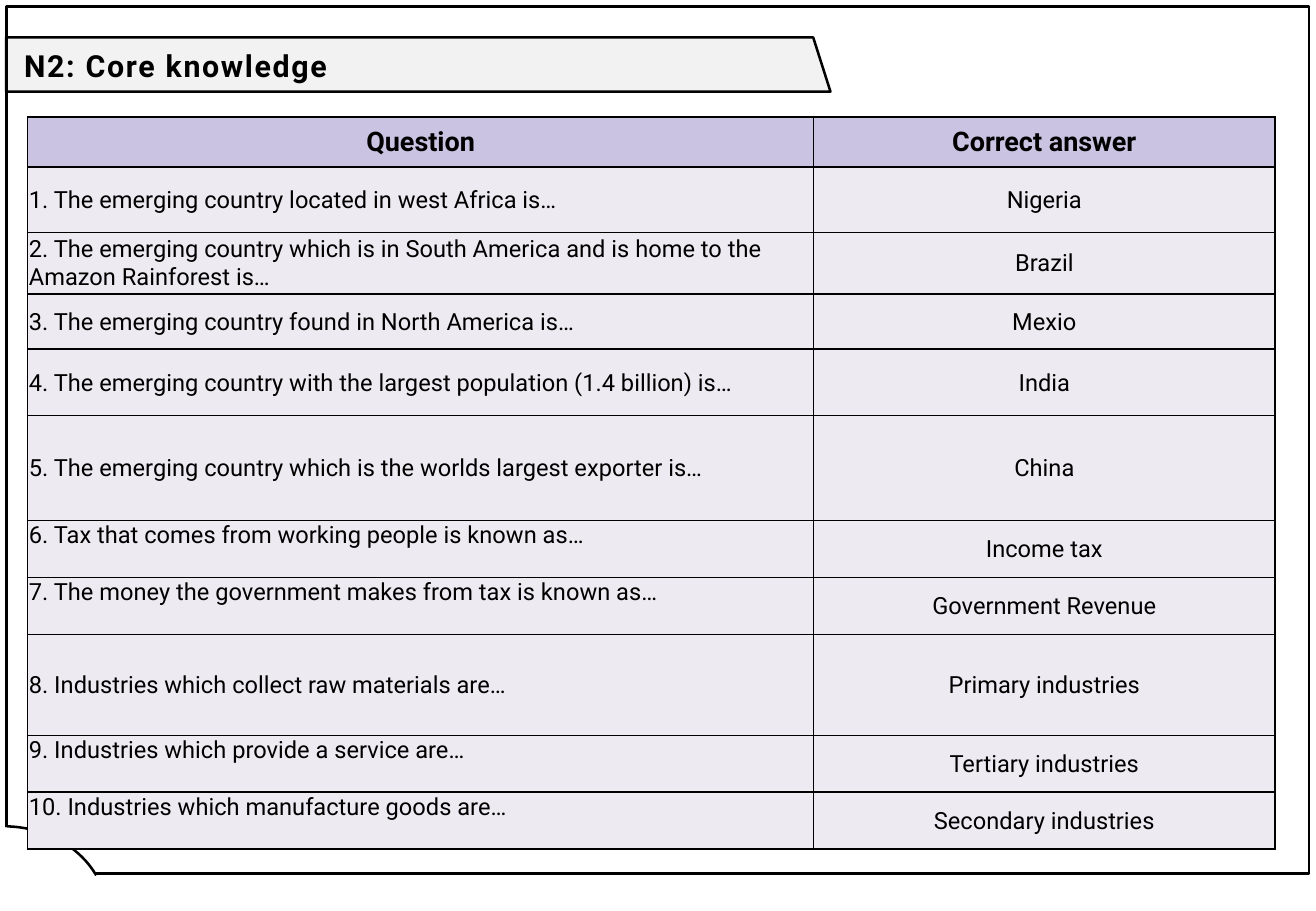
import lxml.etree
import pptx
import pptx.dml.color
import pptx.enum.shapes
import pptx.enum.text
import pptx.oxml.ns
import pptx.util

Pt = pptx.util.Pt
Shape = pptx.enum.shapes.MSO_SHAPE
Align = pptx.enum.text.PP_ALIGN
Anchor = pptx.enum.text.MSO_ANCHOR
BLACK, WHITE, GREY = "000000", "FFFFFF", "F2F2F2"
HEADER_FILL, BODY_FILL = "CAC4E2", "EDEAF1"


def color(value):
    return pptx.dml.color.RGBColor.from_string(value)


class SlideBuilder:
    font_name = "Roboto"
    line_width = 1.5
    border_width = 1

    def __init__(self, slide):
        self.slide = slide

    def style(self, shape, fill=None, line=None):
        shape.shadow.inherit = False
        for part, value in ((shape.fill, fill), (shape.line.fill, line)):
            if value:
                part.solid()
                part.fore_color.rgb = color(value)
            else:
                part.background()
        if line:
            shape.line.width = Pt(self.line_width)
        return shape

    def shape(self, kind, box, fill=None, line=None):
        shape = self.slide.shapes.add_shape(kind, *map(Pt, box))
        return self.style(shape, fill, line)

    def outline(self, points, fill, line):
        points = [(Pt(x), Pt(y)) for x, y in points]
        builder = self.slide.shapes.build_freeform(*points[0])
        builder.add_line_segments(points[1:], close=True)
        return self.style(builder.convert_to_shape(), fill, line)

    def add_text(self, frame, text, size, bold=False, **paragraph_format):
        paragraph = frame.paragraphs[0]
        run = paragraph.add_run()
        run.text = text
        font_format = {"name": self.font_name, "size": Pt(size), "bold": bold}
        for target, values in ((paragraph, paragraph_format), (run.font, font_format)):
            for name, value in values.items():
                setattr(target, name, value)
        run.font.color.rgb = color(BLACK)
        return run

    def title(self, text, box):
        frame = self.slide.shapes.add_textbox(*map(Pt, box)).text_frame
        frame.word_wrap = True
        frame.vertical_anchor = Anchor.MIDDLE
        run = self.add_text(frame, text, 18, True, line_spacing=1.07, space_after=Pt(8))
        run.font._element.set("spc", "100")

    def border(self, cell):
        properties = cell._tc.get_or_add_tcPr()
        qn = pptx.oxml.ns.qn
        for index, side in enumerate(("a:lnL", "a:lnR", "a:lnT", "a:lnB")):
            line = lxml.etree.Element(qn(side), w=str(Pt(self.border_width)))
            fill = lxml.etree.SubElement(line, qn("a:solidFill"))
            lxml.etree.SubElement(fill, qn("a:srgbClr"), val=BLACK)
            properties.insert(index, line)

    def cell(self, cell, text, fill, size, bold, alignment, anchor):
        cell_format = {"margin_left": Pt(0.72), "margin_right": Pt(0.72),
                       "margin_top": Pt(0.72), "margin_bottom": 0,
                       "vertical_anchor": anchor}
        for name, value in cell_format.items():
            setattr(cell, name, value)
        cell.fill.solid()
        cell.fill.fore_color.rgb = color(fill)
        self.border(cell)
        self.add_text(cell.text_frame, text, size, bold, alignment=alignment)

    def table(self, left, top, widths, rows):
        """Each row holds its height, question, answer and question anchor."""
        height = sum(row[0] for row in rows)
        box = map(Pt, (left, top, sum(widths), height))
        table = self.slide.shapes.add_table(len(rows), len(widths), *box).table
        for column, width in zip(table.columns, widths):
            column.width = Pt(width)
        for index, (height, question, answer, anchor) in enumerate(rows):
            table.rows[index].height = Pt(height)
            header = index == 0
            look = (HEADER_FILL, 16, True) if header else (BODY_FILL, 14, False)
            side = Align.CENTER if header else Align.LEFT
            self.cell(table.cell(index, 0), question, *look, side, anchor)
            self.cell(table.cell(index, 1), answer, *look, Align.CENTER, Anchor.MIDDLE)


ROWS = [
    (29.6, "Question", "Correct answer", Anchor.MIDDLE),
    (38.8, "1. The emerging country located in west Africa is…", "Nigeria", Anchor.MIDDLE),
    (36.7, "2. The emerging country which is in South America and is home to the "
           "Amazon Rainforest is…", "Brazil", Anchor.MIDDLE),
    (32.6, "3. The emerging country found in North America is…", "Mexio", Anchor.MIDDLE),
    (39.4, "4. The emerging country with the largest population (1.4 billion) is…",
     "India", Anchor.MIDDLE),
    (62.3, "5. The emerging country which is the worlds largest exporter is…",
     "China", Anchor.MIDDLE),
    (33.7, "6. Tax that comes from working people is known as…", "Income tax", Anchor.TOP),
    (33.7, "7. The money the government makes from tax is known as…",
     "Government Revenue", Anchor.TOP),
    (59.9, "8. Industries which collect raw materials are…",
     "Primary industries", Anchor.MIDDLE),
    (33.7, "9. Industries which provide a service are…", "Tertiary industries", Anchor.TOP),
    (33.7, "10. Industries which manufacture goods are…",
     "Secondary industries", Anchor.TOP),
]


def main():
    presentation = pptx.Presentation()
    presentation.slide_width = Pt(780)
    presentation.slide_height = Pt(540)
    slide = presentation.slides.add_slide(presentation.slide_layouts[6])
    builder = SlideBuilder(slide)

    # Title banner and page frame
    banner = [(3.6, 22.2), (482, 22.2), (492.2, 54.3), (3.6, 54.3)]
    builder.outline(banner, GREY, BLACK)
    builder.shape(Shape.RECTANGLE, (3.8, 3.7, 772, 514), line=BLACK)

    # Curved corner cut out of the frame
    corner = builder.shape(Shape.ARC, (-59, 489.8, 122.4, 104.4), WHITE, BLACK)
    corner.adjustments[0] = 162.53
    corner.adjustments[1] = 202.27
    builder.shape(Shape.RECTANGLE, (0.7, 490.5, 3.6, 7.2), WHITE)

    # Title and question table
    builder.title("N2: Core knowledge", (7.2, 15.1, 463, 45.4))
    builder.table(16.4, 69.3, (465.8, 273.6), ROWS)

    presentation.save("out.pptx")


if __name__ == "__main__":
    main()
